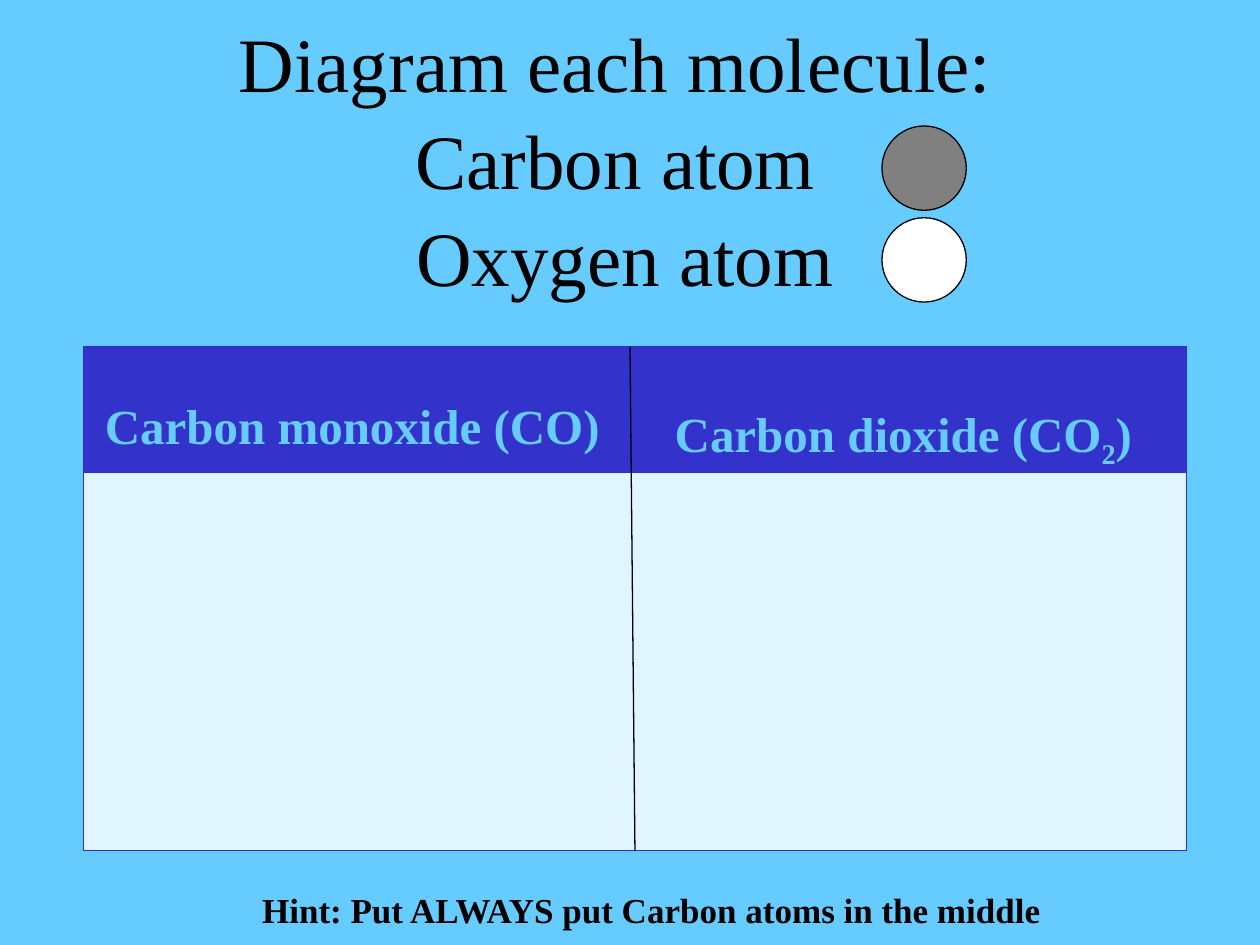
from dataclasses import dataclass

from lxml.etree import SubElement
from pptx import Presentation
from pptx.dml.color import RGBColor
from pptx.enum.shapes import MSO_CONNECTOR, MSO_SHAPE
from pptx.enum.text import MSO_ANCHOR, MSO_AUTO_SIZE, PP_ALIGN
from pptx.oxml.ns import qn
from pptx.util import Cm, Pt

FONT = "Times New Roman"
SKY = RGBColor(0x66, 0xCC, 0xFF)
BLUE = RGBColor(0x33, 0x33, 0xCC)
BORDER = RGBColor(0x2E, 0x2E, 0xCB)
PALE = RGBColor(0xE0, 0xF5, 0xFF)
GRAY = RGBColor(0x80, 0x80, 0x80)
WHITE = RGBColor(0xFF, 0xFF, 0xFF)
BLACK = RGBColor(0, 0, 0)
LINE_WIDTH = Pt(0.75)

TABLE_LEFT, TABLE_TOP = 1.69, 6.99
COLUMN_WIDTHS = (10.82, 11.4)
ROW_HEIGHTS = (2.54, 7.62)


@dataclass
class Atom:
    top: float
    color: RGBColor


@dataclass
class Molecule:
    before: str
    subscript: str = ""
    after: str = ""


ATOMS = (Atom(2.54, GRAY), Atom(4.39, WHITE))
MOLECULES = (
    Molecule("Carbon monoxide (CO)"),
    Molecule("Carbon dioxide (CO", "2", ")"),
)


def style_font(font, size: float, color: RGBColor, bold: bool = False) -> None:
    font.name = FONT
    font.size = Pt(size)
    font.bold = bold
    font.color.rgb = color


def add_atom(slide, atom: Atom) -> None:
    shape = slide.shapes.add_shape(
        MSO_SHAPE.OVAL, Cm(17.78), Cm(atom.top), Cm(1.7), Cm(1.7))
    shape.shadow.inherit = False
    shape.fill.solid()
    shape.fill.fore_color.rgb = atom.color
    shape.line.color.rgb = BLACK
    shape.line.width = LINE_WIDTH


def set_borders(cell, visible: str) -> None:
    """Draw the sides named in visible (L, R, T, B) and clear the others."""
    properties = cell._tc.get_or_add_tcPr()
    for side in "LRTB":
        line = SubElement(properties, qn(f"a:ln{side}"), w=str(LINE_WIDTH))
        if side in visible:
            fill = SubElement(line, qn("a:solidFill"))
            SubElement(fill, qn("a:srgbClr"), val=str(BORDER))
        else:
            SubElement(line, qn("a:noFill"))


def fill_header(cell, molecule: Molecule) -> None:
    cell.margin_left = cell.margin_right = Cm(0.18)
    cell.margin_top = cell.margin_bottom = 0
    paragraph = cell.text_frame.paragraphs[0]
    paragraph.alignment = PP_ALIGN.CENTER
    paragraph.line_spacing = 2.0
    for text in (molecule.before, molecule.subscript, molecule.after):
        if text:
            run = paragraph.add_run()
            run.text = text
            style_font(run.font, 28, SKY, bold=True)
            if text == molecule.subscript:
                run.font._element.set("baseline", "-25000")


def add_molecule_table(slide) -> None:
    table = slide.shapes.add_table(
        len(ROW_HEIGHTS), len(COLUMN_WIDTHS), Cm(TABLE_LEFT), Cm(TABLE_TOP),
        Cm(sum(COLUMN_WIDTHS)), Cm(sum(ROW_HEIGHTS))).table
    for column, width in zip(table.columns, COLUMN_WIDTHS):
        column.width = Cm(width)
    for row, height in zip(table.rows, ROW_HEIGHTS):
        row.height = Cm(height)
    for index, (molecule, side) in enumerate(zip(MOLECULES, "LR")):
        header, body = table.cell(0, index), table.cell(1, index)
        fill_header(header, molecule)
        for cell, color in ((header, BLUE), (body, PALE)):
            set_borders(cell, side + "TB")
            cell.fill.solid()
            cell.fill.fore_color.rgb = color


def add_divider(slide) -> None:
    line = slide.shapes.add_connector(
        MSO_CONNECTOR.STRAIGHT, Cm(12.7), Cm(TABLE_TOP),
        Cm(12.8), Cm(TABLE_TOP + sum(ROW_HEIGHTS)))
    line.line.color.rgb = BLACK
    line.line.width = LINE_WIDTH
    SubElement(line._element.spPr, qn("a:effectLst"))


def add_title(slide) -> None:
    title = slide.shapes.title
    title.left, title.top = Cm(1.07), Cm(0.2)
    title.width, title.height = Cm(23.06), Cm(5.92)
    frame = title.text_frame
    frame.auto_size = MSO_AUTO_SIZE.NONE
    frame.vertical_anchor = MSO_ANCHOR.MIDDLE
    frame.text = "Diagram each molecule: \vCarbon atom \vOxygen atom"
    paragraph = frame.paragraphs[0]
    paragraph.alignment = PP_ALIGN.CENTER
    paragraph.line_spacing = 1.05
    for run in paragraph.runs:
        style_font(run.font, 44, BLACK)


def add_hint(slide) -> None:
    box = slide.shapes.add_textbox(Cm(4.88), Cm(17.78), Cm(16.51), Cm(1.11))
    frame = box.text_frame
    frame.word_wrap = True
    frame.text = "Hint: Put ALWAYS put Carbon atoms in the middle"
    paragraph = frame.paragraphs[0]
    paragraph.alignment = PP_ALIGN.CENTER
    style_font(paragraph.runs[0].font, 20, BLACK, bold=True)


def main() -> None:
    presentation = Presentation()
    presentation.slide_width, presentation.slide_height = Cm(25.4), Cm(19.05)
    slide = presentation.slides.add_slide(presentation.slide_layouts[5])
    slide.background.fill.solid()
    slide.background.fill.fore_color.rgb = SKY

    # Title and atom key
    add_title(slide)
    for atom in ATOMS:
        add_atom(slide, atom)

    # Drawing area for the two molecules
    add_molecule_table(slide)
    add_divider(slide)

    add_hint(slide)
    presentation.save("out.pptx")


if __name__ == "__main__":
    main()
